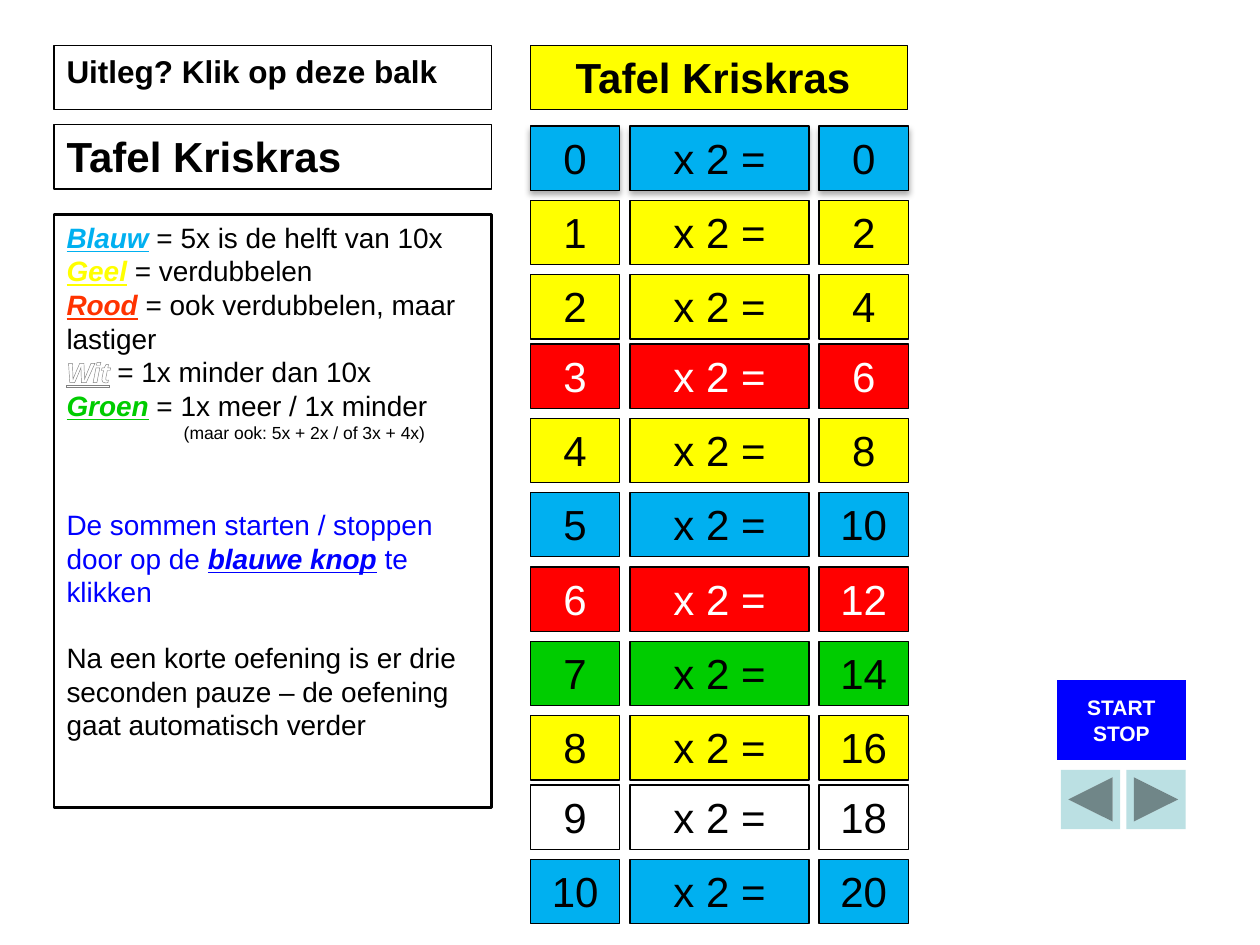
from lxml.etree import SubElement
from pptx import Presentation
from pptx.dml.color import RGBColor
from pptx.enum.shapes import MSO_SHAPE
from pptx.enum.text import MSO_ANCHOR, PP_ALIGN
from pptx.oxml import parse_xml
from pptx.oxml.ns import nsdecls, qn
from pptx.util import Inches, Pt

BLACK, WHITE, BLUE = "000000", "FFFFFF", "0000FF"
SKY, YELLOW, RED, GREEN = "00B0F0", "FFFF00", "FF0000", "00CC00"

FACTOR = 2
ROW_FILLS = [SKY, YELLOW, YELLOW, RED, YELLOW, SKY, RED, GREEN, YELLOW, WHITE, SKY]
COLUMNS = [(4.21, 0.71), (5, 1.42), (6.5, 0.71)]
FIRST_TOP, ROW_PITCH, BOX_HEIGHT = 1, 0.59, 0.51
TIGHTER_ROWS, TIGHTER_BY = (3, 9), 0.04

HEADINGS = [
    ("Uitleg? Klik op deze balk", 18, (0.43, 0.36, 3.47, BOX_HEIGHT), None, PP_ALIGN.LEFT),
    ("Tafel Kriskras", 24, (0.43, 0.99, 3.47, BOX_HEIGHT), None, PP_ALIGN.LEFT),
    ("Tafel Kriskras ", 24, (4.21, 0.36, 2.99, BOX_HEIGHT), YELLOW, PP_ALIGN.CENTER),
]

EXPLANATION = [
    {"spans": [("Blauw", SKY, True), (" = 5x is de helft van 10x", BLACK, False)]},
    {"spans": [("Geel", YELLOW, True), (" = verdubbelen", BLACK, False)]},
    {"spans": [("Rood", "FF3300", True), (" = ook verdubbelen, maar lastiger", BLACK, False)]},
    {"spans": [("Wit", WHITE, True), (" = 1x minder dan 10x", BLACK, False)]},
    {"spans": [("Groen", GREEN, True), (" = 1x meer / 1x minder", BLACK, False)]},
    {"spans": [("(maar ook: 5x + 2x / of 3x + 4x)", BLACK, False)], "size": 10, "indent": 0.93},
    {"spans": [("De sommen starten / stoppen door op de ", BLUE, False),
               ("blauwe knop", BLUE, True), (" te klikken", BLUE, False)], "before": 37},
    {"spans": [("Na een korte oefening is er drie seconden pauze – de oefening "
                "gaat automatisch verder", BLACK, False)], "before": 18.4},
]

ARROW_BUTTONS = [
    (MSO_SHAPE.ACTION_BUTTON_BACK_OR_PREVIOUS, 8.42),
    (MSO_SHAPE.ACTION_BUTTON_FORWARD_OR_NEXT, 8.94),
]


def color(value):
    return RGBColor.from_string(value)


def add_box(page, place, fill=None, line_width=None, kind=MSO_SHAPE.RECTANGLE):
    box = page.shapes.add_shape(kind, *(Inches(length) for length in place))
    box.shadow.inherit = False
    if fill:
        box.fill.solid()
        box.fill.fore_color.rgb = color(fill)
    else:
        box.fill.background()
    if line_width:
        box.line.color.rgb = color(BLACK)
        box.line.width = Pt(line_width)
    else:
        box.line.fill.background()
    box.text_frame.word_wrap = True
    box.text_frame.vertical_anchor = MSO_ANCHOR.TOP
    return box


def add_span(para, text, size, text_color, bold=False, emphasis=False):
    span = para.add_run()
    span.text = text
    span.font.name = "Arial"
    span.font.size = Pt(size)
    span.font.color.rgb = color(text_color)
    span.font.bold = bold or emphasis
    span.font.italic = span.font.underline = emphasis
    return span


def add_line(box, text, size, text_color=BLACK, bold=False, align=PP_ALIGN.CENTER):
    para = box.text_frame.paragraphs[0]
    para.alignment = align
    add_span(para, text, size, text_color, bold)


def outline_span(span):
    span.font._element.insert(0, parse_xml(
        f'<a:ln {nsdecls("a")} w="12700"><a:solidFill><a:srgbClr val="808080"/></a:solidFill></a:ln>'))


def add_shadow(box):
    effects = box._element.spPr.find(qn("a:effectLst"))
    shadow = SubElement(effects, qn("a:outerShdw"), blurRad=str(Pt(3.5)), dist=str(Pt(2.2)),
                        dir="5400000", rotWithShape="0")
    shade = SubElement(shadow, qn("a:srgbClr"), val=BLACK)
    SubElement(shade, qn("a:alpha"), val="32000")


def add_times_table(page):
    for number, fill in enumerate(ROW_FILLS):
        tighter = sum(number >= row for row in TIGHTER_ROWS) * TIGHTER_BY
        top = FIRST_TOP + number * ROW_PITCH - tighter
        texts = [str(number), f"x {FACTOR} =", str(number * FACTOR)]
        for (left, width), text in zip(COLUMNS, texts):
            box = add_box(page, (left, top, width, BOX_HEIGHT), fill, 0.75)
            add_line(box, text, 24, WHITE if fill == RED else BLACK)
            if number == 0:
                add_shadow(box)


def add_explanation(page):
    frame = add_box(page, (0.43, 1.7, 3.47, 4.71), WHITE, 1.5).text_frame
    for index, entry in enumerate(EXPLANATION):
        para = frame.add_paragraph() if index else frame.paragraphs[0]
        para.alignment = PP_ALIGN.LEFT
        para.space_before = Pt(entry.get("before", 0))
        para._p.get_or_add_pPr().set("marL", str(Inches(entry.get("indent", 0))))
        for text, text_color, emphasis in entry["spans"]:
            span = add_span(para, text, entry.get("size", 16), text_color, emphasis=emphasis)
            if text_color == WHITE:
                outline_span(span)


def add_buttons(page):
    for kind, left in ARROW_BUTTONS:
        add_box(page, (left, 6.11, 0.47, 0.47), "BBE0E3", kind=kind)
    button = add_box(page, (8.39, 5.4, 1.02, 0.63), BLUE, kind=MSO_SHAPE.ACTION_BUTTON_CUSTOM)
    frame = button.text_frame
    frame.word_wrap = False
    frame.vertical_anchor = MSO_ANCHOR.MIDDLE
    for para, text in zip((frame.paragraphs[0], frame.add_paragraph()), ("START", "STOP")):
        para.alignment = PP_ALIGN.CENTER
        add_span(para, text, 12, WHITE, bold=True)


def main():
    deck = Presentation()
    deck.slide_width, deck.slide_height = Inches(10), Inches(7.5)
    page = deck.slides.add_slide(deck.slide_layouts[6])
    add_times_table(page)
    for text, size, place, fill, align in HEADINGS:
        add_line(add_box(page, place, fill, 0.75), text, size, bold=True, align=align)
    add_explanation(page)
    add_buttons(page)
    deck.save("out.pptx")


if __name__ == "__main__":
    main()
